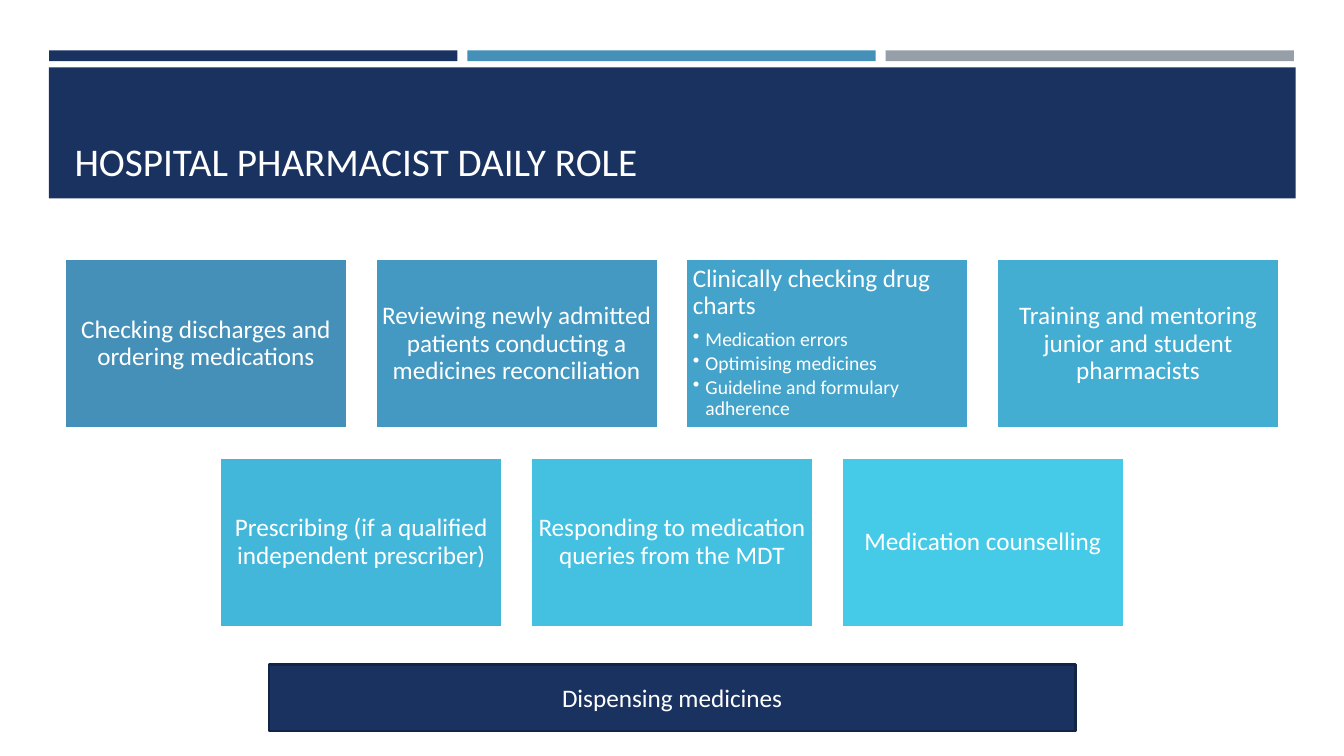
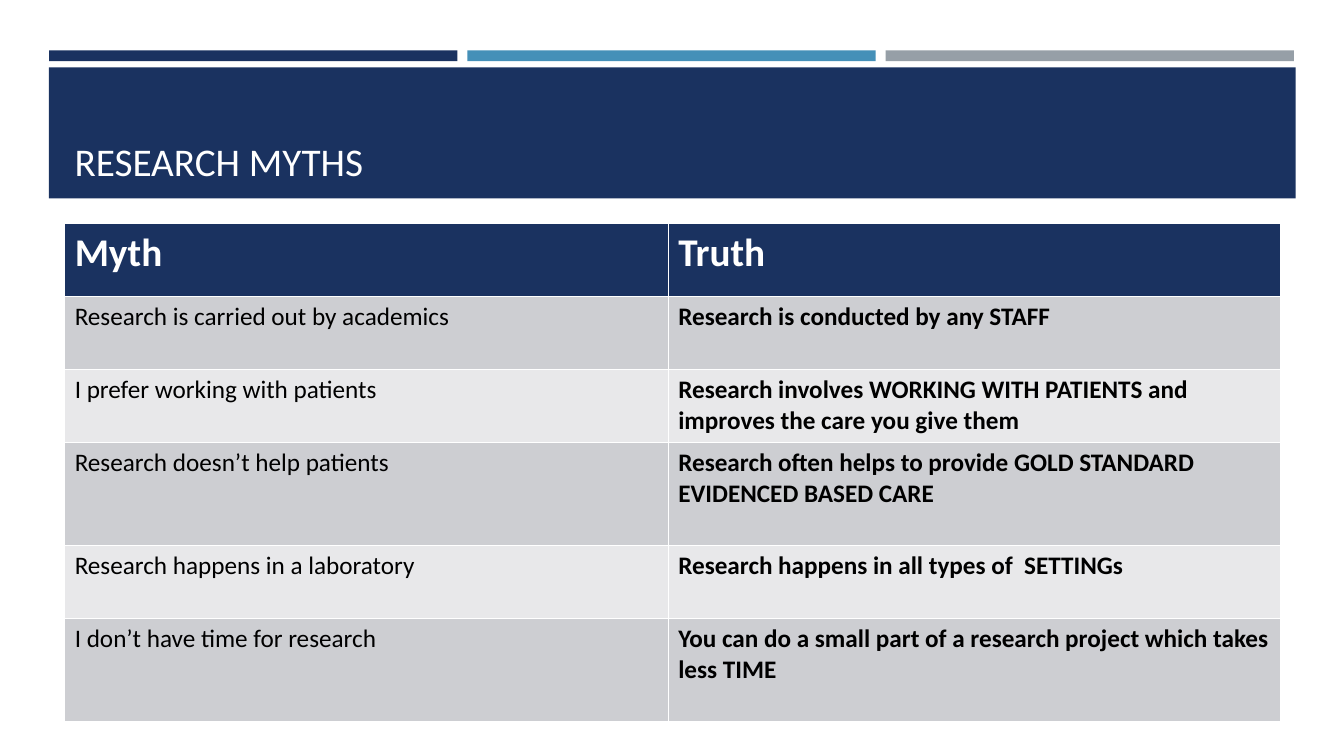
from lxml import etree
from pptx import Presentation
from pptx.dml.color import RGBColor
from pptx.enum.shapes import MSO_SHAPE
from pptx.enum.text import MSO_ANCHOR, PP_ALIGN
from pptx.oxml.ns import qn
from pptx.util import Cm, Pt

RECT = MSO_SHAPE.RECTANGLE
MIDDLE, TOP, BOTTOM = MSO_ANCHOR.MIDDLE, MSO_ANCHOR.TOP, MSO_ANCHOR.BOTTOM
LEFT, CENTER = PP_ALIGN.LEFT, PP_ALIGN.CENTER
FONT = "Calibri"
HEX = {
    "navy": "1A3260", "edge": "132547", "blue": "4590B8", "grey": "969FA7",
    "white": "FFFFFF", "black": "000000", "dark": "CDCED2", "light": "E8E8EA",
    "card1": "4590B8", "card2": "4399C2", "card3": "43A3CA", "card4": "43ADD2",
    "card5": "43B7DA", "card6": "44C1E1", "card7": "45CBE8",
}
COLOR = {name: RGBColor.from_string(code) for name, code in HEX.items()}
WIDE, HIGH = 33.87, 19.05


def add_box(slide, left, top, width, height, fill, line=None):
    box = slide.shapes.add_shape(RECT, Cm(left), Cm(top), Cm(width), Cm(height))
    box.shadow.inherit = False
    box.fill.solid()
    box.fill.fore_color.rgb = COLOR[fill]
    if line:
        box.line.color.rgb = COLOR[line]
        box.line.width = Pt(1.75)
    else:
        box.line.fill.background()
    return box


def style(para, size, color="white", align=LEFT, bold=False):
    para.alignment = align
    for run in para.runs:
        run.font.name = FONT
        run.font.size = Pt(size)
        run.font.bold = bold
        run.font.color.rgb = COLOR[color]


deck = Presentation()
deck.slide_width, deck.slide_height = Cm(WIDE), Cm(HIGH)
slides = []
for title in ("HOSPITAL PHARMACIST DAILY ROLE", "RESEARCH MYTHS"):
    slide = deck.slides.add_slide(deck.slide_layouts[6])
    for i, fill in enumerate(("navy", "blue", "grey")):
        add_box(slide, 1.24 + i * 10.54, 1.27, 10.29, 0.27, fill)
    add_box(slide, 1.23, 1.7, 31.42, 3.3, "navy")
    head = slide.shapes.add_textbox(Cm(1.63), Cm(1.96), Cm(30.63), Cm(2.82))
    frame = head.text_frame
    frame.word_wrap = True
    frame.vertical_anchor = BOTTOM
    frame.text = title
    style(frame.paragraphs[0], 28)
    slides.append(slide)
roles, myths = slides

CARDS = [
    [
        ["Checking discharges and ordering medications"],
        ["Reviewing newly admitted patients conducting a medicines reconciliation"],
        ["Clinically checking drug charts", "Medication errors",
         "Optimising medicines", "Guideline and formulary adherence"],
        ["Training and mentoring junior and student pharmacists"],
    ],
    [
        ["Prescribing (if a qualified independent prescriber)"],
        ["Responding to medication queries from the MDT"],
        ["Medication counselling"],
    ],
]
CARD_W, CARD_H, STEP_X, STEP_Y = 7.12, 4.27, 7.83, 5
count = 0
for r, row in enumerate(CARDS):
    start = (WIDE - CARD_W - STEP_X * (len(row) - 1)) / 2
    for c, (lead, *points) in enumerate(row):
        count += 1
        card = add_box(roles, start + c * STEP_X, 6.53 + r * STEP_Y,
                       CARD_W, CARD_H, f"card{count}", "white")
        frame = card.text_frame
        frame.margin_left = frame.margin_right = Cm(0.17)
        frame.margin_top = frame.margin_bottom = Cm(0.17)
        frame.vertical_anchor = TOP if points else MIDDLE
        frame.text = lead
        para = frame.paragraphs[0]
        para.line_spacing = 0.9
        para.space_after = Pt(6.3)
        style(para, 18, align=LEFT if points else CENTER)
        for point in points:
            para = frame.add_paragraph()
            para.text = point
            para.level = 1
            para.line_spacing = 0.9
            para.space_after = Pt(2.1)
            style(para, 14)
            props = para._p.get_or_add_pPr()
            props.set("marL", str(Cm(0.32)))
            props.set("indent", str(-Cm(0.32)))
            etree.SubElement(props, qn("a:buChar")).set("char", "•")

base = add_box(roles, 6.78, 16.74, 20.32, 1.68, "navy", "edge")
base.text_frame.text = "Dispensing medicines"
base.text_frame.vertical_anchor = MIDDLE
style(base.text_frame.paragraphs[0], 18, align=CENTER)

ROWS = [
    ("Myth", "Truth"),
    ("Research is carried out by academics", "Research is conducted by any STAFF"),
    ("I prefer working with patients",
     "Research involves WORKING WITH PATIENTS and improves the care you give them"),
    ("Research doesn’t help patients",
     "Research often helps to provide GOLD STANDARD EVIDENCED BASED CARE"),
    ("Research happens in a laboratory",
     "Research happens in all types of  SETTINGs"),
    ("I don’t have time for research",
     "You can do a small part of a research project which takes less TIME"),
]
TALL = [1.84, 1.84, 1.84, 2.59, 1.84, 2.59]
table = myths.shapes.add_table(len(ROWS), 2, Cm(1.63), Cm(5.64),
                               Cm(30.63), Cm(sum(TALL))).table
for c, width in enumerate((15.21, 15.42)):
    table.columns[c].width = Cm(width)
for r, row in enumerate(ROWS):
    table.rows[r].height = Cm(TALL[r])
    for c, text in enumerate(row):
        cell = table.cell(r, c)
        cell.text = text
        cell.fill.solid()
        para = cell.text_frame.paragraphs[0]
        if r == 0:
            cell.fill.fore_color.rgb = COLOR["navy"]
            style(para, 28, bold=True)
        else:
            cell.fill.fore_color.rgb = COLOR["dark" if r % 2 else "light"]
            style(para, 18, "black", bold=c == 1)

deck.save("out.pptx")
